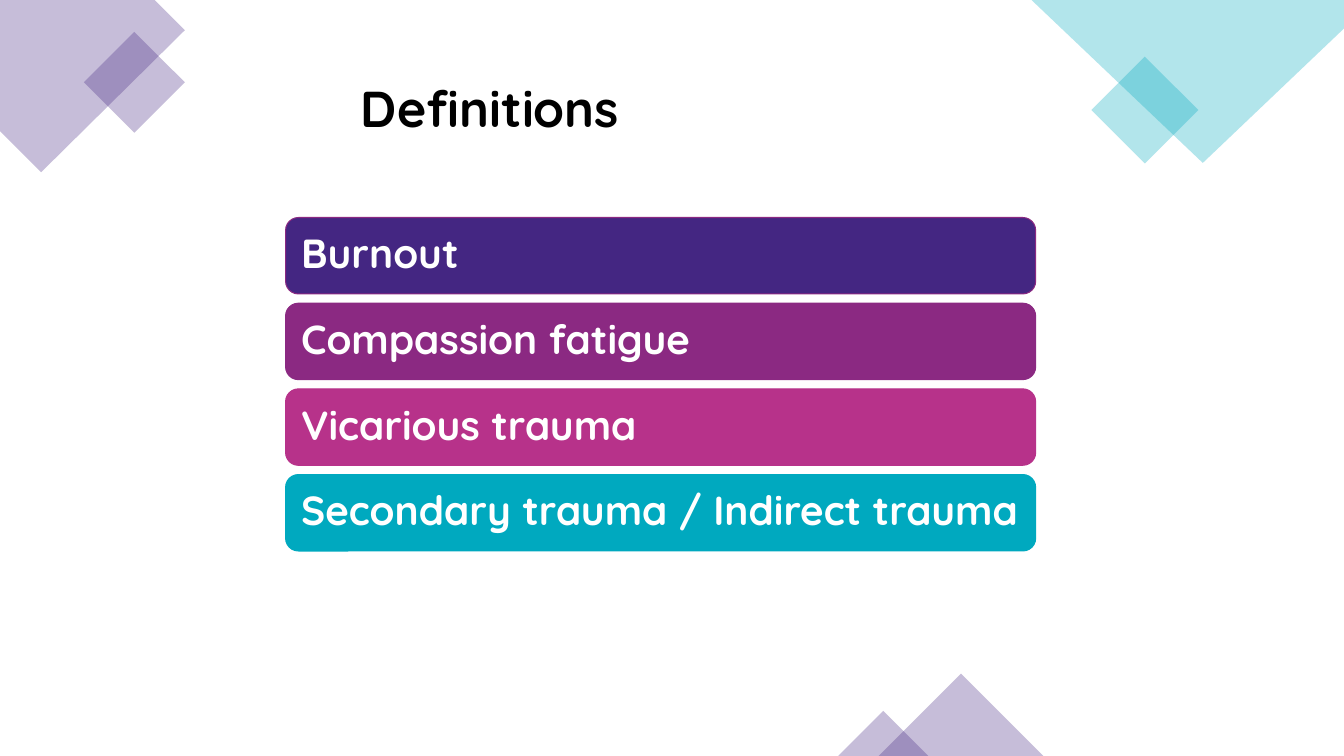
from dataclasses import dataclass

import lxml.etree
import pptx
import pptx.dml.color
import pptx.enum.shapes
import pptx.enum.text
import pptx.oxml.ns
import pptx.util

SHAPES = pptx.enum.shapes.MSO_SHAPE
ALIGN = pptx.enum.text.PP_ALIGN
MIDDLE = pptx.enum.text.MSO_ANCHOR.MIDDLE

# Square grid: 16 columns by 9 rows
WIDTH, HEIGHT = pptx.util.Inches(13.333), pptx.util.Inches(7.5)
COLUMNS, ROWS = 16, 9


@dataclass(frozen=True)
class Theme:
    font: str = "Quicksand"
    title_size: int = 36
    bar_size: int = 29
    title_color: str = "000000"
    bar_text: str = "FFFFFF"
    indigo: str = "442682"
    purple: str = "8B2982"
    magenta: str = "B7328A"
    teal: str = "00A9BF"
    decor_opacity: int = 30


THEME = Theme()


def grid(cells):
    return round(cells * WIDTH / COLUMNS)


def rgb(color):
    return pptx.dml.color.RGBColor.from_string(color)


def paint_decor(shape, color):
    """Give a corner ornament its translucent fill."""
    shape.shadow.inherit = False
    shape.line.fill.background()
    shape.fill.solid()
    shape.fill.fore_color.rgb = rgb(color)
    color_element = shape.fill._xPr.find(".//" + pptx.oxml.ns.qn("a:srgbClr"))
    alpha = lxml.etree.SubElement(color_element, pptx.oxml.ns.qn("a:alpha"))
    alpha.set("val", str(THEME.decor_opacity * 1000))


def add_polygon(slide, points, color):
    corners = [(grid(x), grid(y)) for x, y in points]
    builder = slide.shapes.build_freeform(*corners[0])
    builder.add_line_segments(corners[1:], close=True)
    paint_decor(builder.convert_to_shape(), color)


def add_tilted_square(slide, center_x, center_y, side, color):
    square = slide.shapes.add_shape(
        SHAPES.RECTANGLE, grid(center_x - side / 2),
        grid(center_y - side / 2), grid(side), grid(side))
    square.rotation = 315
    paint_decor(square, color)


def add_peak(slide, left, width, color):
    """Add a triangle, half as high as wide, on the bottom edge."""
    peak = slide.shapes.add_shape(
        SHAPES.ISOSCELES_TRIANGLE, grid(left), grid(ROWS - width / 2),
        grid(width), grid(width / 2))
    paint_decor(peak, color)


def write_line(shape, text, size, color):
    frame = shape.text_frame
    frame.word_wrap = True
    frame.vertical_anchor = MIDDLE
    paragraph = frame.paragraphs[0]
    paragraph.text = text
    paragraph.alignment = ALIGN.LEFT
    paragraph.line_spacing = 0.9
    paragraph.font.name = THEME.font
    paragraph.font.size = pptx.util.Pt(size)
    paragraph.font.bold = True
    paragraph.font.color.rgb = rgb(color)


def add_title(slide, text):
    title = slide.shapes.add_textbox(
        grid(4.18), grid(0.37), grid(10.46), grid(1.91))
    write_line(title, text, THEME.title_size, THEME.title_color)


def add_bar(slide, row, text, fill, outline):
    top, step = 2.59, 1.02
    bar = slide.shapes.add_shape(
        SHAPES.ROUNDED_RECTANGLE, grid(3.4), grid(top + row * step),
        grid(8.93), grid(0.91))
    bar.shadow.inherit = False
    bar.fill.solid()
    bar.fill.fore_color.rgb = rgb(fill)
    bar.line.color.rgb = rgb(outline)
    bar.line.width = pptx.util.Pt(0.75)
    bar.text_frame.margin_left = grid(0.14)
    bar.text_frame.margin_right = grid(0.06)
    write_line(bar, text, THEME.bar_size, THEME.bar_text)


def main():
    presentation = pptx.Presentation()
    presentation.slide_width, presentation.slide_height = WIDTH, HEIGHT
    slide = presentation.slides.add_slide(presentation.slide_layouts[6])

    # Top left ornament
    add_polygon(slide, [(0, 0), (1.84, 0), (2.2, 0.36), (0.49, 2.05),
                        (0, 1.56)], THEME.indigo)
    add_tilted_square(slide, 1.6, 0.98, 0.85, THEME.indigo)

    # Top right ornament
    add_tilted_square(slide, 13.63, 1.31, 0.9, THEME.teal)
    add_polygon(slide, [(COLUMNS, 0), (12.28, 0), (14.32, 1.94),
                        (COLUMNS, 0.34)], THEME.teal)

    # Bottom ornament
    add_peak(slide, 10.46, 1.96, THEME.indigo)
    add_peak(slide, 9.98, 1.07, THEME.indigo)

    # Title and list of terms
    add_title(slide, "Definitions")
    terms = [
        ("Burnout", THEME.indigo, THEME.purple),
        ("Compassion fatigue", THEME.purple, THEME.purple),
        ("Vicarious trauma", THEME.magenta, THEME.magenta),
        ("Secondary trauma / Indirect trauma", THEME.teal, THEME.teal),
    ]
    for row, (text, fill, outline) in enumerate(terms):
        add_bar(slide, row, text, fill, outline)

    presentation.save("out.pptx")


if __name__ == "__main__":
    main()
